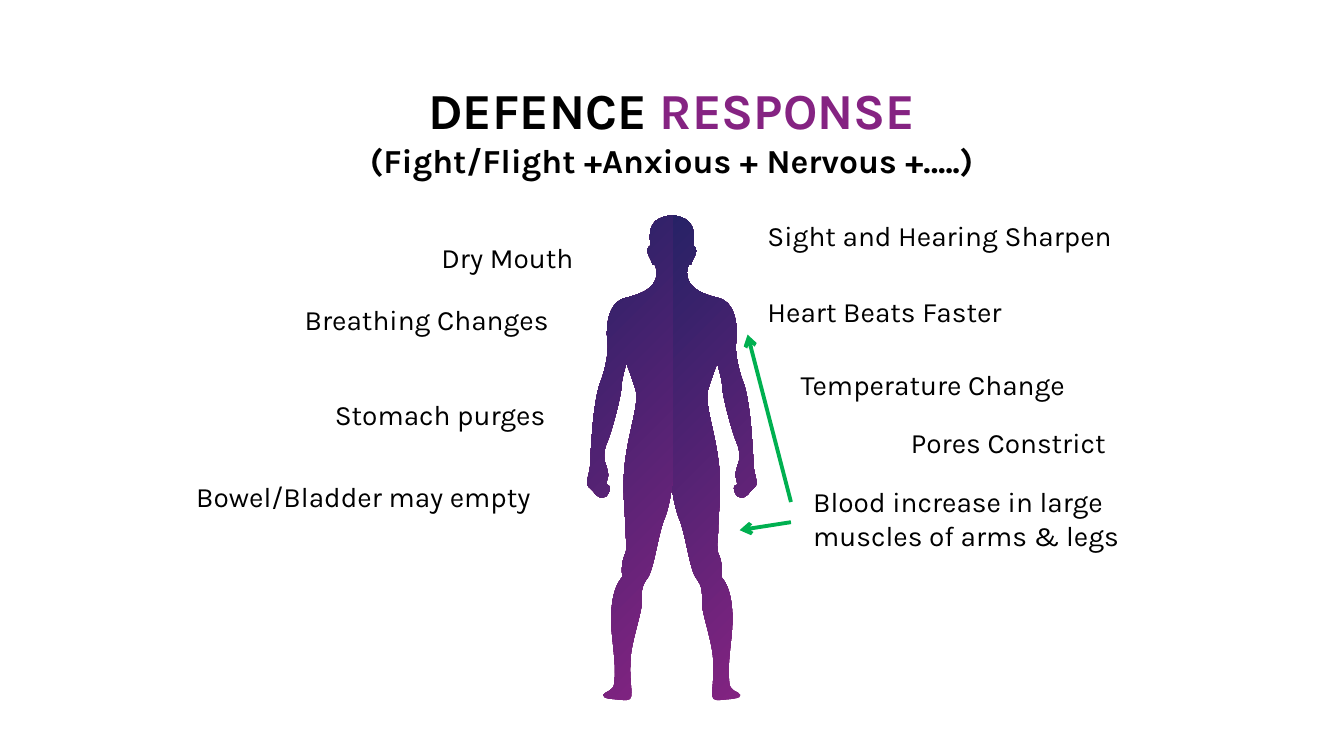
from lxml import etree
from pptx import Presentation
from pptx.dml.color import RGBColor
from pptx.enum.shapes import MSO_CONNECTOR
from pptx.enum.text import MSO_ANCHOR, MSO_AUTO_SIZE, PP_ALIGN
from pptx.oxml.ns import qn
from pptx.util import Pt

STRAIGHT = MSO_CONNECTOR.STRAIGHT
TOP = MSO_ANCHOR.TOP
FIT_SHAPE = MSO_AUTO_SIZE.SHAPE_TO_FIT_TEXT
LEFT, CENTER, RIGHT = PP_ALIGN.LEFT, PP_ALIGN.CENTER, PP_ALIGN.RIGHT

COLORS = {"text": "000000", "purple": "852382", "navy": "272266", "green": "00B050"}
FONT = "Karla"
TITLE_ONLY = 5
LABEL_WIDTH, LABEL_HEIGHT = 273.6, 31.7

# Regions as left, top, width, height in points
TITLE_BOX = (245.5, 53, 468.7, 79.9)
BODY_BOX = (419, 153.6, 121.8, 346.3)
LEFT_BOX = (112.5, 168.5, 304.2, 202.3)
RIGHT_BOX = (541.1, 152.8, 375.9, 245.5)
ARROW_BOX = (528.3, 239, 36.7, 139.7)

# Text, inset from the region's inner edge, offset from its top
LEFT_LABELS = [
    ("Dry Mouth", 0, 0),
    ("Breathing Changes", 17.6, 43.9),
    ("Stomach purges", 20, 111.6),
    ("Bowel/Bladder may empty", 30.4, 170.6),
]
RIGHT_LABELS = [
    ("Sight and Hearing Sharpen", 0, 0),
    ("Heart Beats Faster", 0, 54),
    ("Temperature Change", 23.8, 106.1),
    ("Pores Constrict", 102.5, 147.5),
    ("Blood increase in large muscles of arms & legs", 32.7, 190),
]

# Half a body on a grid 481 units high: x from the inner edge, y from the top.
# Each row is one Bézier curve: two control points and an end point.
BODY_HEIGHT, SEAM_OVERLAP = 481, 1
BODY_CURVES = [
    (0, 261, 0, 261, 0, 261), (0, 261, 2, 287, 9, 303),
    (15, 319, 19, 352, 25, 360), (32, 369, 31, 375, 31, 387),
    (32, 398, 42, 427, 42, 442), (43, 457, 41, 469, 41, 474),
    (41, 480, 42, 482, 51, 481), (60, 480, 70, 480, 69, 476),
    (67, 472, 58, 473, 58, 463), (57, 453, 57, 448, 60, 420),
    (63, 392, 60, 370, 50, 359), (50, 359, 52, 347, 48, 338),
    (44, 329, 47, 325, 47, 310), (47, 297, 51, 270, 47, 242),
    (43, 212, 33, 186, 37, 173), (41, 160, 46, 147, 46, 147),
    (46, 147, 51, 163, 51, 170), (51, 178, 60, 213, 65, 225),
    (70, 236, 68, 245, 66, 249), (65, 253, 63, 258, 65, 262),
    (66, 266, 66, 268, 66, 268), (66, 268, 64, 267, 63, 269),
    (62, 271, 63, 276, 66, 279), (71, 282, 75, 280, 79, 274),
    (83, 270, 86, 269, 85, 264), (84, 258, 82, 252, 82, 248),
    (82, 243, 81, 228, 80, 215), (79, 202, 77, 183, 73, 169),
    (67, 154, 63, 135, 65, 124), (66, 114, 66, 86, 46, 82),
    (26, 77, 16, 70, 16, 57), (16, 57, 16, 53, 18, 49),
    (18, 49, 18, 50, 20, 49), (21, 48, 21, 44, 23, 42),
    (25, 39, 27, 32, 22, 30), (22, 30, 25, 15, 19, 8),
    (14, 1, 0, 0, 0, 0),
]


def color(name):
    return RGBColor.from_string(COLORS[name])


def apply_format(target, values):
    for name, value in values.items():
        setattr(target, name, value)


def add_run(paragraph, text, size, color_name="text", bold=False):
    run = paragraph.add_run()
    run.text = text
    apply_format(run.font, {"name": FONT, "size": Pt(size), "bold": bold})
    run.font.color.rgb = color(color_name)


def add_curved_shape(shapes, start, curves):
    """Build the outline through the end points, then bend each segment."""
    builder = shapes.build_freeform(*start)
    builder.add_line_segments([curve[-1] for curve in curves], close=True)
    shape = builder.convert_to_shape()
    segments = list(shape._element.iter(qn("a:lnTo")))
    for segment, curve in zip(segments, curves):
        bend = etree.Element(qn("a:cubicBezTo"))
        for x, y in curve:
            etree.SubElement(bend, qn("a:pt"), x=str(x - shape.left), y=str(y - shape.top))
        segment.getparent().replace(segment, bend)
    return shape


def add_title(slide, box):
    left, top, width, height = (Pt(value) for value in box)
    title = slide.shapes.title
    apply_format(title, {"left": left, "top": top, "width": width, "height": height})
    frame = title.text_frame
    apply_format(frame, {"word_wrap": False, "auto_size": FIT_SHAPE,
                         "vertical_anchor": TOP})
    heading, subtitle = frame.paragraphs[0], frame.add_paragraph()
    heading.alignment = subtitle.alignment = CENTER
    add_run(heading, "DEFENCE ", 36, bold=True)
    add_run(heading, "RESPONSE", 36, "purple", bold=True)
    add_run(subtitle, "(Fight/Flight +Anxious + Nervous +…..)", 24, bold=True)


def add_body(slide, box):
    left, top, width, height = box
    center, scale = left + width / 2, height / BODY_HEIGHT
    body = slide.shapes.add_group_shape()

    def place(x, y, side):
        return Pt(center + side * (x - SEAM_OVERLAP) * scale), Pt(top + y * scale)

    # Right half, then its mirror
    for side in (1, -1):
        curves = [[place(*row[i:i + 2], side) for i in (0, 2, 4)] for row in BODY_CURVES]
        half = add_curved_shape(body.shapes, place(0, 0, side), curves)
        half.shadow.inherit = False
        half.line.fill.background()
        half.fill.gradient()
        half.fill.gradient_angle = 135
        for stop, name in zip(half.fill.gradient_stops, ("purple", "navy")):
            stop.color.rgb = color(name)


def add_labels(slide, box, labels, alignment):
    left, top, width, height = box
    for text, inset, offset in labels:
        x = left + inset if alignment == LEFT else left + width - inset - LABEL_WIDTH
        label = slide.shapes.add_textbox(Pt(x), Pt(top + offset),
                                         Pt(LABEL_WIDTH), Pt(LABEL_HEIGHT))
        apply_format(label.text_frame, {"word_wrap": True, "auto_size": FIT_SHAPE})
        paragraph = label.text_frame.paragraphs[0]
        paragraph.alignment = alignment
        add_run(paragraph, text, 20)


def add_arrows(slide, box):
    left, top, width, height = box
    right, bottom = left + width, top + height
    # Start height, then the tip: arm first, leg second
    for start_y, tip_x, tip_y in ((top + 119.6, left + 5.7, top),
                                  (top + 134, left, bottom)):
        arrow = slide.shapes.add_connector(STRAIGHT, Pt(right), Pt(start_y),
                                           Pt(tip_x), Pt(tip_y))
        arrow.line.width = Pt(2.75)
        arrow.line.color.rgb = color("green")
        etree.SubElement(arrow.line._get_or_add_ln(), qn("a:tailEnd"), type="arrow")
        etree.SubElement(arrow._element.spPr, qn("a:effectLst"))


def main():
    presentation = Presentation()
    presentation.slide_width, presentation.slide_height = Pt(960), Pt(540)
    slide = presentation.slides.add_slide(presentation.slide_layouts[TITLE_ONLY])
    add_body(slide, BODY_BOX)
    add_title(slide, TITLE_BOX)
    add_labels(slide, LEFT_BOX, LEFT_LABELS, RIGHT)
    add_labels(slide, RIGHT_BOX, RIGHT_LABELS, LEFT)
    add_arrows(slide, ARROW_BOX)
    presentation.save("out.pptx")


if __name__ == "__main__":
    main()
